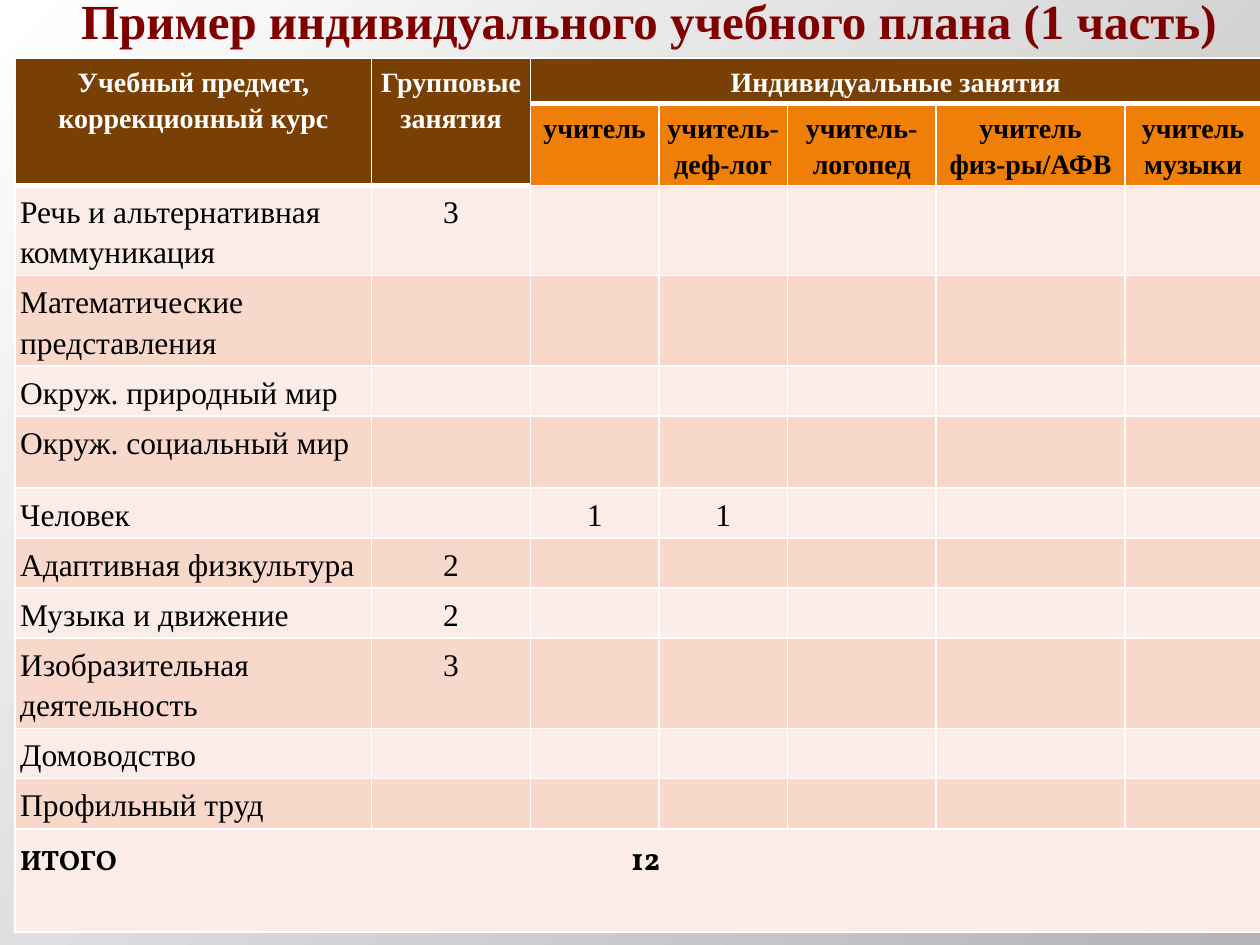
from dataclasses import dataclass

from lxml.etree import SubElement
from pptx import Presentation
from pptx.dml.color import RGBColor
from pptx.enum.text import MSO_ANCHOR, PP_ALIGN
from pptx.oxml.ns import qn
from pptx.util import Inches, Pt


@dataclass(frozen=True)
class Theme:
    font: str = "Times New Roman"
    total_font: str = "Vollkorn"
    title: str = "800000"
    head: str = "784004"
    subhead: str = "F07F09"
    bands: tuple = ("FCECE7", "F9D8CC")
    white: str = "FFFFFF"
    black: str = "000000"
    backdrop: tuple = ("FFFFFF", "B4B4B4")
    title_size: int = 28
    head_size: int = 16
    body_size: int = 18


THEME = Theme()

# Content
TITLE = "Пример индивидуального учебного плана (1 часть)"
HEADS = ["Учебный предмет, коррекционный курс", "Групповые занятия",
         "Индивидуальные занятия"]
SPECIALISTS = ["учитель", "учитель-деф-лог", "учитель-логопед",
               "учитель\nфиз-ры/АФВ", "учитель музыки"]
# Subject, then hours by column number
SUBJECTS = [
    ("Речь и альтернативная коммуникация", {1: "3"}),
    ("Математические представления", {}),
    ("Окруж. природный мир", {}),
    ("Окруж. социальный мир", {}),
    ("Человек", {2: "1", 3: "1"}),
    ("Адаптивная физкультура", {1: "2"}),
    ("Музыка и движение", {1: "2"}),
    ("Изобразительная деятельность", {1: "3"}),
    ("Домоводство", {}),
    ("Профильный труд", {}),
]
TOTAL = ("ИТОГО", "12")

# Grid, in inches
COLUMNS = [2.83, 1.26, 1.02, 1.02, 1.18, 1.5, 1.08]
ONE_LINE, TWO_LINES = 0.39, 0.71
ROWS = [0.36, 0.64, TWO_LINES, TWO_LINES, ONE_LINE, 0.57, ONE_LINE, ONE_LINE,
        ONE_LINE, TWO_LINES, ONE_LINE, ONE_LINE, 0.82]
TABLE_LEFT, TABLE_TOP = 0.12, 0.46
TOTAL_TAB = 4.85


def style_font(font, size, color, bold=False, name=THEME.font):
    font.name, font.size, font.bold = name, Pt(size), bold
    font.color.rgb = RGBColor.from_string(color)


def add_borders(cell, top=1, bottom=1):
    properties = cell._tc.get_or_add_tcPr()
    for side, width in (("L", 1), ("R", 1), ("T", top), ("B", bottom)):
        line = SubElement(properties, qn(f"a:ln{side}"), w=str(Pt(width)))
        fill = SubElement(line, qn("a:solidFill"))
        SubElement(fill, qn("a:srgbClr"), val=THEME.white)


def write(cell, text, size, color, bold=False, align=PP_ALIGN.CENTER):
    cell.text = text
    for para in cell.text_frame.paragraphs:
        para.alignment, para.line_spacing = align, 1.15
        for font in [para.font] + [span.font for span in para.runs]:
            style_font(font, size, color, bold)


def paint_background(slide):
    fill = slide.background.fill
    fill.gradient()
    for stop, color in zip(fill.gradient_stops, THEME.backdrop):
        stop.color.rgb = RGBColor.from_string(color)
    gradient = slide._element.xpath(".//p:bg//a:gradFill")[0]
    gradient.remove(gradient.find(qn("a:lin")))
    path = SubElement(gradient, qn("a:path"), path="circle")
    SubElement(path, qn("a:fillToRect"), r="100000", b="100000")


def add_title(slide):
    title = slide.shapes.title
    title.left, title.top, title.width, title.height = map(
        Inches, (0.47, -0.27, 9.36, 0.86))
    title.text_frame.text = TITLE
    title.text_frame.vertical_anchor = MSO_ANCHOR.MIDDLE
    para = title.text_frame.paragraphs[0]
    para.alignment = PP_ALIGN.CENTER
    style_font(para.runs[0].font, THEME.title_size, THEME.title, True)


def add_grid(slide):
    table = slide.shapes.add_table(
        len(ROWS), len(COLUMNS), Inches(TABLE_LEFT), Inches(TABLE_TOP),
        Inches(sum(COLUMNS)), Inches(sum(ROWS))).table
    for column, width in zip(table.columns, COLUMNS):
        column.width = Inches(width)
    for row, height in zip(table.rows, ROWS):
        row.height = Inches(height)

    # Cell frames and fills
    for r in range(len(ROWS)):
        for c in range(len(COLUMNS)):
            cell = table.cell(r, c)
            cell.margin_left = cell.margin_right = Inches(0.04)
            cell.margin_top = cell.margin_bottom = Inches(0.04)
            is_head = r == 0 or (r == 1 and c < 2)
            add_borders(cell, top=3 if r == 1 and c > 1 else 1,
                        bottom=3 if is_head else 1)
            color = (THEME.head if is_head else
                     THEME.subhead if r == 1 else THEME.bands[r % 2])
            cell.fill.solid()
            cell.fill.fore_color.rgb = RGBColor.from_string(color)

    # Two header rows
    last = len(COLUMNS) - 1
    for c, (text, end) in enumerate(zip(HEADS, [(1, 0), (1, 1), (0, last)])):
        table.cell(0, c).merge(table.cell(*end))
        write(table.cell(0, c), text, THEME.head_size, THEME.white, True)
    for c, text in enumerate(SPECIALISTS, start=2):
        write(table.cell(1, c), text, THEME.head_size, THEME.black, True)

    # Subjects and hours
    for r, (subject, hours) in enumerate(SUBJECTS, start=2):
        write(table.cell(r, 0), subject, THEME.body_size, THEME.black,
              align=PP_ALIGN.LEFT)
        for c, value in hours.items():
            write(table.cell(r, c), value, THEME.body_size, THEME.black)

    # Total row, with its number at a tab stop
    total = table.cell(len(ROWS) - 1, 0)
    total.merge(table.cell(len(ROWS) - 1, last))
    para = total.text_frame.paragraphs[0]
    para.line_spacing = 1.15
    tabs = SubElement(para._p.get_or_add_pPr(), qn("a:tabLst"))
    SubElement(tabs, qn("a:tab"), pos=str(Inches(TOTAL_TAB)), algn="l")
    label, number = TOTAL
    for text, size in ((label + "\t", THEME.head_size),
                       (number, THEME.body_size)):
        span = para.add_run()
        span.text = text
        style_font(span.font, size, THEME.black, True, THEME.total_font)


def main():
    deck = Presentation()
    deck.slide_width, deck.slide_height = Inches(10), Inches(7.5)
    slide = deck.slides.add_slide(deck.slide_layouts[5])
    paint_background(slide)
    add_title(slide)
    add_grid(slide)
    deck.save("out.pptx")


if __name__ == "__main__":
    main()
